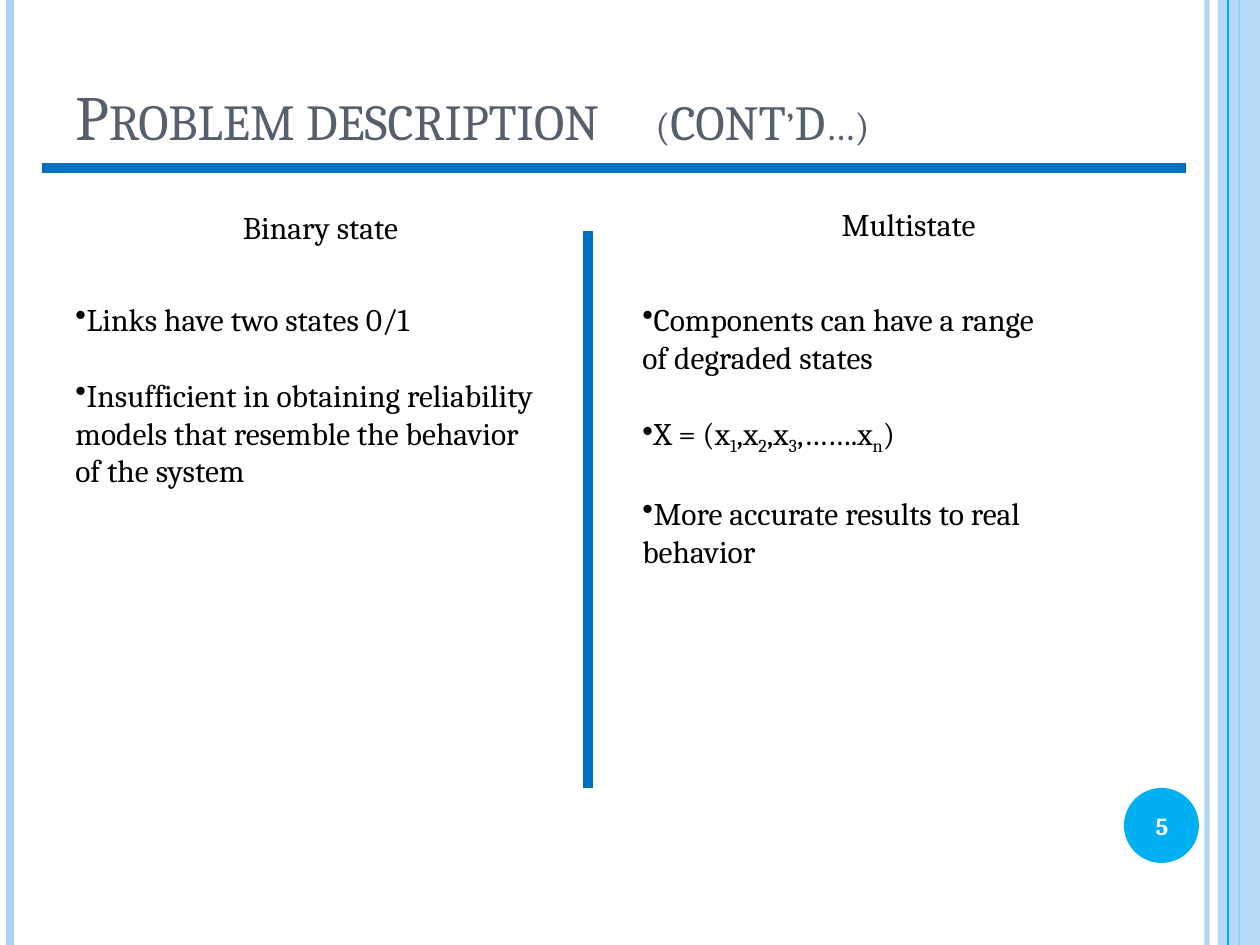
"""Build the slide comparing binary state and multistate models."""
import pptx
import pptx.util
import pptx.dml.color
import pptx.enum.shapes
import pptx.enum.text
import pptx.oxml
import pptx.oxml.ns

PX_PER_INCH = 126
WIDTH, HEIGHT = 1260, 945
FONT = "Cambria"
BLACK, WHITE, SLATE = "000000", "FFFFFF", "575F6D"
PALE, SKY, BLUE = "ABD4F6", "00B0F0", "0070C0"
LINE_GAP = 21.6
CENTER = pptx.enum.text.PP_ALIGN.CENTER
ANCHOR = pptx.enum.text.MSO_ANCHOR

TITLE = [("Problem description\t", 36), ("(CONT’D…)", 28)]
TITLE_TAB = 580
PAGE_NUMBER = "5"

EDGE_LINES = [(1207, PALE, 3, 93), (10, PALE, 4.5, 100), (1239, SKY, 1.5, 100)]
FRONT_EDGE_LINE = (1228, SKY, 0.75, 100)
RULES = [((42, 168), (1186, 168)), ((588, 788), (588, 231))]

HEADINGS = [("Binary state", (147, 202, 347, 50)), ("Multistate", (735, 199, 347, 50))]

# Each paragraph is: text pieces (odd pieces are subscripts), bulleted, gap above
COLUMNS = [
    ((63, 294, 483, 280), [
        (["Links have two states 0/1"], True, False),
        (["Insufficient in obtaining reliability models that resemble "
          "the behavior of the system"], True, True),
    ]),
    ((630, 294, 494, 318), [
        (["Components can have a range"], True, False),
        (["of degraded states"], False, False),
        (["X = (x", "1", ",x", "2", ",x", "3", ",…….x", "n", ")"], True, True),
        (["More accurate results to real behavior"], True, True),
    ]),
]


def emu(px):
    return pptx.util.Emu(round(px * 914400 / PX_PER_INCH))


def rgb(color):
    return pptx.dml.color.RGBColor.from_string(color)


def add_element(parent, tag, **attributes):
    element = pptx.oxml.parse_xml(f"<a:{tag} {pptx.oxml.ns.nsdecls('a')}/>")
    for name, value in attributes.items():
        element.set(name, str(value))
    parent.append(element)
    return element


def set_opacity(owner, percent):
    if percent < 100:
        for color in owner.iter(pptx.oxml.ns.qn("a:srgbClr")):
            add_element(color, "alpha", val=percent * 1000)


def add_line(slide, start, end, color, width, opacity=100):
    line = slide.shapes.add_connector(
        pptx.enum.shapes.MSO_CONNECTOR.STRAIGHT, *map(emu, start + end))
    line.line.color.rgb = rgb(color)
    line.line.width = pptx.util.Pt(width)
    properties = line._element.spPr
    set_opacity(properties, opacity)
    add_element(properties, "effectLst")


def add_edge_line(slide, x, color, width, opacity):
    add_line(slide, (x, 0), (x, HEIGHT), color, width, opacity)


def add_shape(slide, kind, box, color, opacity=100):
    shape = slide.shapes.add_shape(kind, *map(emu, box))
    shape.shadow.inherit = False
    shape.fill.solid()
    shape.fill.fore_color.rgb = rgb(color)
    shape.line.fill.background()
    set_opacity(shape._element.spPr, opacity)


def add_text_box(slide, box, anchor=ANCHOR.TOP):
    frame = slide.shapes.add_textbox(*map(emu, box)).text_frame
    frame.word_wrap = True
    frame.vertical_anchor = anchor
    return frame


def add_run(paragraph, text, size=18, color=BLACK, bold=False):
    run = paragraph.add_run()
    run.text = text
    run.font.name = FONT
    run.font.size = pptx.util.Pt(size)
    run.font.color.rgb = rgb(color)
    run.font.bold = bold
    return run


def add_centered(slide, text, box, anchor=ANCHOR.TOP, **style):
    paragraph = add_text_box(slide, box, anchor).paragraphs[0]
    paragraph.alignment = CENTER
    add_run(paragraph, text, **style)


def add_title(slide):
    paragraph = add_text_box(slide, (63, 68, 1050, 91), ANCHOR.BOTTOM).paragraphs[0]
    tabs = add_element(paragraph._p.get_or_add_pPr(), "tabLst")
    add_element(tabs, "tab", pos=emu(TITLE_TAB), algn="l")
    for text, size in TITLE:
        run = add_run(paragraph, text, size, SLATE)
        run._r.get_or_add_rPr().set("cap", "small")


def add_column(slide, box, paragraphs):
    frame = add_text_box(slide, box)
    for index, (pieces, bulleted, gap) in enumerate(paragraphs):
        paragraph = frame.add_paragraph() if index else frame.paragraphs[0]
        if gap:
            paragraph.space_before = pptx.util.Pt(LINE_GAP)
        if bulleted:
            add_element(paragraph._p.get_or_add_pPr(), "buChar", char="•")
        for position, piece in enumerate(pieces):
            run = add_run(paragraph, piece)
            if position % 2:
                run._r.get_or_add_rPr().set("baseline", "-25000")


def main():
    presentation = pptx.Presentation()
    presentation.slide_width, presentation.slide_height = emu(WIDTH), emu(HEIGHT)
    slide = presentation.slides.add_slide(presentation.slide_layouts[6])
    shapes = pptx.enum.shapes.MSO_SHAPE

    for edge in EDGE_LINES:
        add_edge_line(slide, *edge)
    add_shape(slide, shapes.RECTANGLE, (1218, 0, 42, HEIGHT), PALE, 87)
    add_edge_line(slide, *FRONT_EDGE_LINE)
    add_shape(slide, shapes.OVAL, (1124, 788, 75, 75), SKY)

    add_title(slide)
    add_centered(slide, PAGE_NUMBER, (1120, 790, 84, 72), ANCHOR.MIDDLE,
                 size=14, color=WHITE, bold=True)
    for start, end in RULES:
        add_line(slide, start, end, BLUE, 6)
    for text, box in HEADINGS:
        add_centered(slide, text, box)
    for box, paragraphs in COLUMNS:
        add_column(slide, box, paragraphs)

    presentation.save("out.pptx")


if __name__ == "__main__":
    main()
